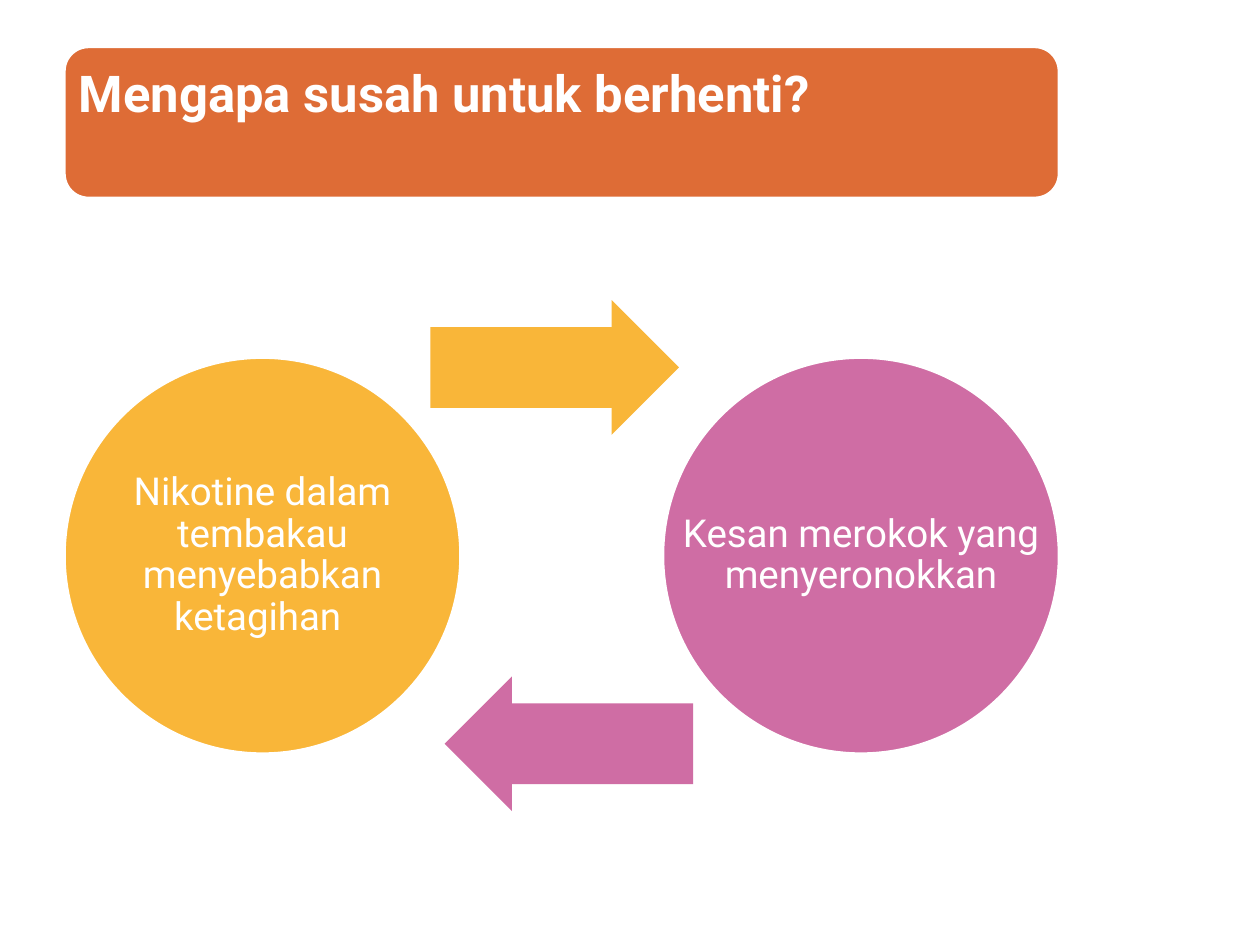
from pptx import Presentation
from pptx.dml.color import RGBColor
from pptx.enum.shapes import MSO_SHAPE
from pptx.enum.text import MSO_ANCHOR, PP_ALIGN
from pptx.util import Pt

COLORS = {"white": "FFFFFF", "orange": "DE6C36", "yellow": "F9B639", "pink": "CF6DA4"}
TITLE_FORMAT = {"size": Pt(29), "bold": True, "name": "Roboto"}
CIRCLE_FORMAT = {"size": Pt(22), "bold": False, "name": "Roboto"}


def add_block(slide, kind, box, color, outlined=True):
    """Add a filled preset shape, with a white outline if wanted."""
    shape = slide.shapes.add_shape(kind, *map(Pt, box))
    shape.shadow.inherit = False
    shape.fill.solid()
    shape.fill.fore_color.rgb = RGBColor.from_string(COLORS[color])
    if outlined:
        shape.line.color.rgb = RGBColor.from_string(COLORS["white"])
        shape.line.width = Pt(3.15)
    else:
        shape.line.fill.background()
    return shape


def add_label(slide, box, text, font_format, frame_format, alignment):
    """Add white wrapped text over the given box."""
    frame = slide.shapes.add_textbox(*map(Pt, box)).text_frame
    frame.word_wrap = True
    for name, value in frame_format.items():
        setattr(frame, name, value)
    paragraph = frame.paragraphs[0]
    paragraph.alignment = alignment
    paragraph.line_spacing = 0.9
    run = paragraph.add_run()
    run.text = text
    for name, value in font_format.items():
        setattr(run.font, name, value)
    run.font.color.rgb = RGBColor.from_string(COLORS["white"])


def add_title(slide, box, text):
    """Place the rounded title bar and its heading."""
    add_block(slide, MSO_SHAPE.ROUNDED_RECTANGLE, box, "orange")
    frame_format = {
        "vertical_anchor": MSO_ANCHOR.TOP,
        "margin_left": Pt(9),
        "margin_right": Pt(9),
        "margin_top": Pt(13),
        "margin_bottom": Pt(9),
    }
    add_label(slide, box, text, TITLE_FORMAT, frame_format, PP_ALIGN.LEFT)


def add_cycle(slide, box, steps):
    """Place two circles joined by a pair of opposing arrows."""
    left, top, width, height = box
    diameter, arrow_width, arrow_height, arrow_offset = 228, 142, 77, 210
    frame_format = {"vertical_anchor": MSO_ANCHOR.MIDDLE}
    for side in ("left", "right", "top", "bottom"):
        frame_format[f"margin_{side}"] = Pt(2)
    for index, (text, color) in enumerate(steps):
        circle_box = (
            left + index * (width - diameter),
            top + (height - diameter) / 2,
            diameter,
            diameter,
        )
        add_block(slide, MSO_SHAPE.OVAL, circle_box, color)
        add_label(slide, circle_box, text, CIRCLE_FORMAT, frame_format, PP_ALIGN.CENTER)
        arrow_box = (
            left + arrow_offset + index * (width - arrow_width - 2 * arrow_offset),
            top + index * (height - arrow_height),
            arrow_width,
            arrow_height,
        )
        arrow = add_block(slide, MSO_SHAPE.RIGHT_ARROW, arrow_box, color, outlined=False)
        arrow.adjustments[0] = 0.6
        arrow.adjustments[1] = 0.5
        arrow.rotation = 180 * index


def main():
    """Build and save the slide."""
    presentation = Presentation()
    presentation.slide_width = Pt(720)
    presentation.slide_height = Pt(540)
    slide = presentation.slides.add_slide(presentation.slide_layouts[6])
    add_title(slide, (36, 26, 570, 88), "Mengapa susah untuk berhenti?")
    steps = [
        ("Nikotine dalam tembakau menyebabkan ketagihan ", "yellow"),
        ("Kesan merokok yang menyeronokkan", "pink"),
    ]
    add_cycle(slide, (36, 171.5, 570, 292), steps)
    presentation.save("out.pptx")


if __name__ == "__main__":
    main()
